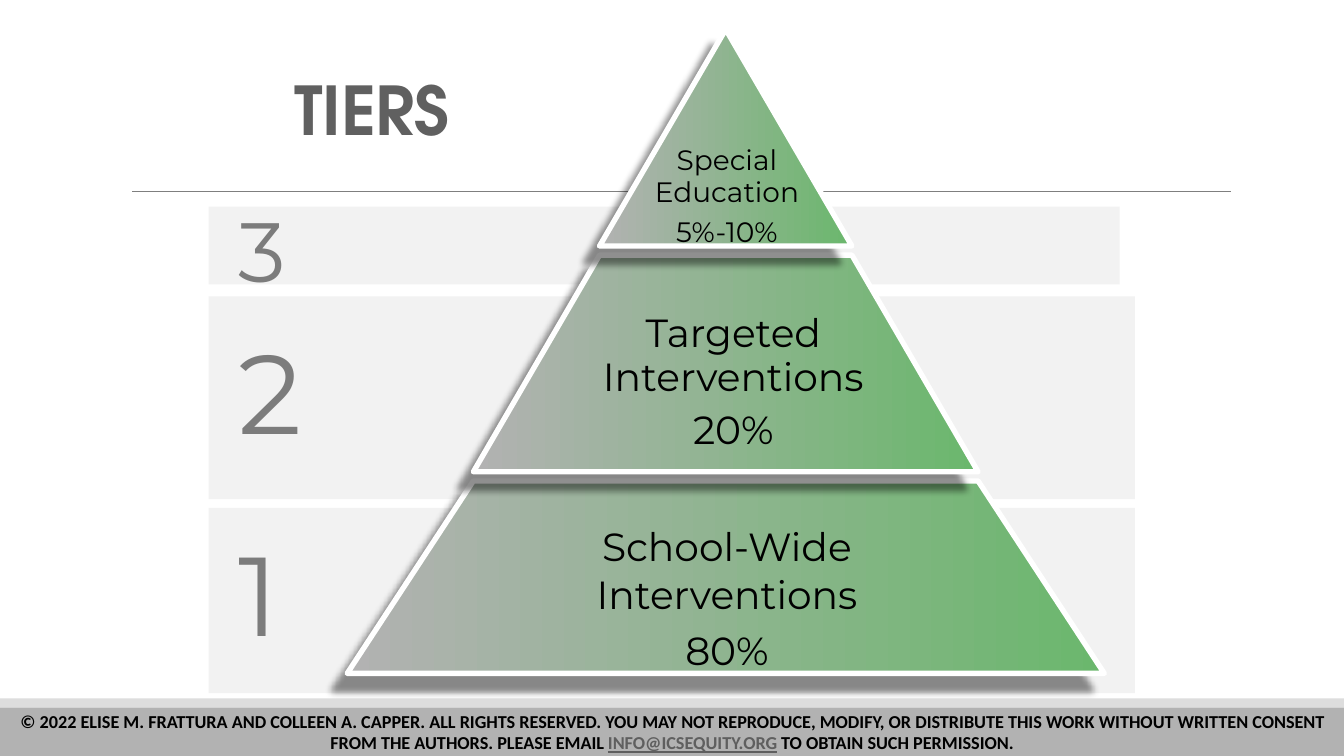
"""Build the TIERS slide: a three-level intervention pyramid."""
from dataclasses import dataclass

from lxml.etree import SubElement
from pptx import Presentation
from pptx.dml.color import RGBColor
from pptx.enum.shapes import MSO_CONNECTOR as Connector, MSO_SHAPE as Preset
from pptx.enum.text import MSO_ANCHOR as Anchor, PP_ALIGN as Align
from pptx.oxml.ns import qn
from pptx.util import Cm, Pt

COLORS = {
    "footer": "B2B2B2", "footer_edge": "DDDDDD", "rule": "7F7F7F",
    "band": "F2F2F2", "number": "7C7C7C", "title": "606060",
    "tier_left": "B2B2B2", "tier_right": "6BB76D", "outline": "FFFFFF",
    "text": "000000", "email": "5F5F5F",
}
FONT = "Montserrat"
SLIDE_WIDTH, SLIDE_HEIGHT = 33.87, 19.05
APEX_X, TIER_STEP = 18.29, 3.18
BAND_LEFT = 5.26


@dataclass(frozen=True)
class Box:
    left: float
    top: float
    width: float
    height: float

    def lengths(self) -> list:
        return [Cm(v) for v in (self.left, self.top, self.width, self.height)]


@dataclass(frozen=True)
class Band:
    number: str
    top: float
    width: float
    height: float
    size: int = 80
    inset_top: float = 0.05


@dataclass(frozen=True)
class Tier:
    level: int
    top: float
    bottom: float
    lines: tuple
    label: Box
    size: int = 28
    spacing: float = 1.0
    gaps: tuple = (0, 6)
    inset: float = 0.1
    anchor: Anchor = Anchor.MIDDLE


BANDS = (
    Band("3", 5.21, 22.96, 1.96, 60, 0.55),
    Band("2", 7.47, 23.34, 5.11),
    Band("1", 12.8, 23.34, 4.67),
)
TIERS = (
    Tier(2, 12.12, 16.97, ("School-Wide Interventions", "80%"),
         Box(12.12, 12.4, 12.4, 5.31), spacing=1.02),
    Tier(1, 6.43, 11.89, ("Targeted Interventions", "20%"),
         Box(14.35, 6.91, 8.26, 5.46), spacing=0.95),
    Tier(0, 0.74, 6.2, ("Special", "Education", "5%-10%"),
         Box(15.88, 3.25, 4.88, 3.02), 20, 0.65, (0, 7, 13), 0.05, Anchor.BOTTOM),
)
NOTICE = (
    ("© 2022 ELISE M. FRATTURA AND COLLEEN A. CAPPER. ALL RIGHTS RESERVED. "
     "YOU MAY NOT REPRODUCE, MODIFY, OR DISTRIBUTE THIS WORK WITHOUT WRITTEN "
     "CONSENT FROM THE AUTHORS. PLEASE EMAIL ", "text"),
    ("INFO@ICSEQUITY.ORG", "email"),
    (" TO OBTAIN SUCH PERMISSION.", "text"),
)


def rgb(name: str) -> RGBColor:
    return RGBColor.from_string(COLORS[name])


def style_font(font, name: str, size: int, color: str, bold: bool = False) -> None:
    font.name, font.size, font.bold = name, Pt(size), bold
    font.color.rgb = rgb(color)


def set_frame(frame, anchor: Anchor, left: float, top: float,
              right: float, bottom: float) -> None:
    frame.word_wrap, frame.vertical_anchor = True, anchor
    frame.margin_left, frame.margin_top = Cm(left), Cm(top)
    frame.margin_right, frame.margin_bottom = Cm(right), Cm(bottom)


def add_bar(slide, box: Box, color: str):
    bar = slide.shapes.add_shape(Preset.RECTANGLE, *box.lengths())
    bar.shadow.inherit = False
    bar.fill.solid()
    bar.fill.fore_color.rgb = rgb(color)
    bar.line.fill.background()
    return bar


def add_footer(slide) -> None:
    add_bar(slide, Box(0, 17.6, SLIDE_WIDTH, 0.23), "footer_edge")
    footer = add_bar(slide, Box(0, 17.83, SLIDE_WIDTH, 1.22), "footer")
    set_frame(footer.text_frame, Anchor.MIDDLE, 0.25, 0.25, 0.25, 0.25)
    notice = footer.text_frame.paragraphs[0]
    notice.alignment = Align.CENTER
    for text, color in NOTICE:
        run = notice.add_run()
        run.text = text
        style_font(run.font, "Calibri", 13, color, True)
        run.font.underline = color == "email"


def add_rule(slide) -> None:
    rule = slide.shapes.add_connector(
        Connector.STRAIGHT, Cm(3.33), Cm(4.83), Cm(31.01), Cm(4.83))
    rule.line.color.rgb = rgb("rule")
    rule.line.width = Pt(0.75)
    SubElement(rule._element.spPr, qn("a:effectLst"))


def add_title(slide) -> None:
    title = slide.shapes.title
    title.left, title.top, title.width, title.height = Box(
        7.16, -0.23, 20.02, 4.11).lengths()
    set_frame(title.text_frame, Anchor.BOTTOM, 0.25, 0.13, 0.25, 0.13)
    title.text_frame.text = "TIERS"
    heading = title.text_frame.paragraphs[0]
    heading.alignment, heading.line_spacing = Align.LEFT, 0.85
    style_font(heading.font, "TeX Gyre Adventor", 48, "title", True)


def add_band(slide, band: Band) -> None:
    bar = add_bar(slide, Box(BAND_LEFT, band.top, band.width, band.height), "band")
    set_frame(bar.text_frame, Anchor.MIDDLE, 0.75, band.inset_top, 0.05, 0.05)
    bar.text_frame.text = band.number
    number = bar.text_frame.paragraphs[0]
    number.alignment, number.line_spacing = Align.LEFT, 0.9
    style_font(number.font, FONT, band.size, "number")


def add_shadow(shape) -> None:
    shape.shadow.inherit = False
    effects = shape._element.spPr.find(qn("a:effectLst"))
    shadow = SubElement(effects, qn("a:outerShdw"), blurRad=str(Pt(5)),
                        dist=str(Pt(15)), dir=str(132 * 60000), rotWithShape="0")
    black = SubElement(shadow, qn("a:srgbClr"), val=COLORS["text"])
    SubElement(black, qn("a:alpha"), val="43000")


def add_tier(slide, tier: Tier) -> None:
    upper, lower = tier.level * TIER_STEP, (tier.level + 1) * TIER_STEP
    corners = [(APEX_X - lower, tier.bottom), (APEX_X - upper, tier.top)]
    if upper:
        corners.append((APEX_X + upper, tier.top))
    corners.append((APEX_X + lower, tier.bottom))
    points = [(Cm(x), Cm(y)) for x, y in corners]
    outline = slide.shapes.build_freeform(*points[0])
    outline.add_line_segments(points[1:], close=True)
    block = outline.convert_to_shape()
    block.fill.gradient()
    block.fill.gradient_angle = 0
    for stop, position, color in zip(
            block.fill.gradient_stops, (0, 1), ("tier_left", "tier_right")):
        stop.position, stop.color.rgb = position, rgb(color)
    block.line.color.rgb = rgb("outline")
    block.line.width = Pt(3.82)
    add_shadow(block)


def add_label(slide, tier: Tier) -> None:
    frame = slide.shapes.add_textbox(*tier.label.lengths()).text_frame
    set_frame(frame, tier.anchor, *[tier.inset] * 4)
    frame.text = "\n".join(tier.lines)
    for line, gap in zip(frame.paragraphs, tier.gaps):
        line.alignment, line.line_spacing = Align.CENTER, tier.spacing
        line.space_before = Pt(gap)
        style_font(line.font, FONT, tier.size, "text")


def main() -> None:
    deck = Presentation()
    deck.slide_width, deck.slide_height = Cm(SLIDE_WIDTH), Cm(SLIDE_HEIGHT)
    slide = deck.slides.add_slide(deck.slide_layouts[5])
    add_title(slide)
    add_footer(slide)
    add_rule(slide)
    for band in BANDS:
        add_band(slide, band)
    for tier in TIERS:
        add_tier(slide, tier)
    for tier in TIERS:
        add_label(slide, tier)
    deck.save("out.pptx")


if __name__ == "__main__":
    main()
